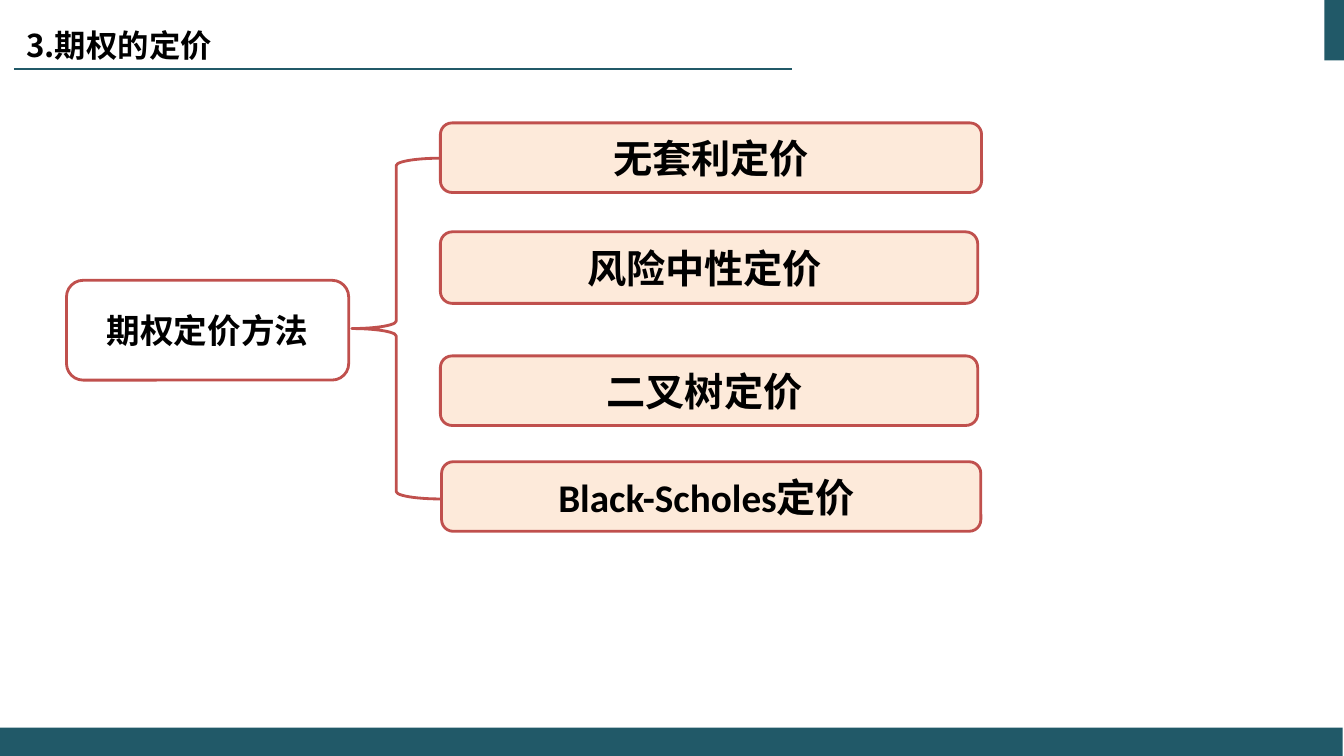
"""Build the slide on option pricing methods."""
from dataclasses import dataclass

from lxml.etree import SubElement
from pptx import Presentation
from pptx.dml.color import RGBColor
from pptx.enum.shapes import MSO_CONNECTOR, MSO_SHAPE
from pptx.enum.text import MSO_ANCHOR, MSO_AUTO_SIZE, PP_ALIGN
from pptx.oxml.ns import qn
from pptx.shapes.autoshape import Shape
from pptx.slide import Slide
from pptx.text.text import TextFrame
from pptx.util import Pt


@dataclass(frozen=True)
class Theme:
    """Colours, fonts and sizes of the slide."""
    teal: RGBColor = RGBColor(0x21, 0x59, 0x68)
    red: RGBColor = RGBColor(0xC0, 0x50, 0x4D)
    peach: RGBColor = RGBColor(0xFD, 0xEA, 0xDA)
    white: RGBColor = RGBColor(0xFF, 0xFF, 0xFF)
    black: RGBColor = RGBColor(0, 0, 0)
    latin: str = "Calibri"
    cjk: str = "Noto Sans CJK SC"
    title: float = 22.4
    root: float = 24
    method: float = 28
    outline: float = 2
    rule: float = 1.5


@dataclass(frozen=True)
class Box:
    """A place on the slide, in points."""
    left: float
    top: float
    width: float
    height: float


@dataclass(frozen=True)
class Method:
    """A pricing method and its box."""
    text: str
    box: Box


THEME = Theme()
FOOTER = Box(0, 519.8, 959, 20.2)
CORNER = Box(946, 0, 14, 43.2)
TITLE = Box(11.5, 9.4, 238.3, 39.6)
ROOT = Box(47.5, 200.2, 201.6, 71.3)
BRACE = Box(251.3, 113, 63.4, 243.4)
METHODS = (
    Method("无套利定价", Box(314.6, 87.8, 386.6, 49.7)),
    Method("风险中性定价 ", Box(314.6, 165.6, 383.8, 51.1)),
    Method("二叉树定价 ", Box(314.6, 254.2, 383.8, 49.7)),
    Method("Black-Scholes定价 ", Box(315.4, 329.8, 385.2, 49.7)),
)


def place(sp: Shape, box: Box) -> None:
    """Move and size a shape."""
    sp.left, sp.top = Pt(box.left), Pt(box.top)
    sp.width, sp.height = Pt(box.width), Pt(box.height)


def write(tf: TextFrame, text: str, size: float, font: str, align: PP_ALIGN, anchor: MSO_ANCHOR) -> None:
    """Write one bold black line."""
    tf.word_wrap = True
    tf.auto_size = MSO_AUTO_SIZE.NONE
    tf.vertical_anchor = anchor
    p = tf.paragraphs[0]
    p.alignment = align
    r = p.add_run()
    r.text = text
    r.font.size, r.font.bold, r.font.name = Pt(size), True, font
    r.font.color.rgb = THEME.black
    SubElement(r.font._element, qn("a:ea"), typeface=THEME.cjk)


def add_panel(s: Slide, kind: MSO_SHAPE, box: Box, fill: RGBColor, outline: RGBColor | None = None) -> Shape:
    """Add a flat filled shape, outlined if a colour is given."""
    sp = s.shapes.add_shape(kind, 0, 0, 0, 0)
    place(sp, box)
    sp.shadow.inherit = False
    sp.fill.solid()
    sp.fill.fore_color.rgb = fill
    if outline is None:
        sp.line.fill.background()
    else:
        sp.line.color.rgb = outline
        sp.line.width = Pt(THEME.outline)
    return sp


def add_label(s: Slide, text: str, box: Box, fill: RGBColor, size: float) -> None:
    """Add a rounded box with centred text."""
    sp = add_panel(s, MSO_SHAPE.ROUNDED_RECTANGLE, box, fill, THEME.red)
    write(sp.text_frame, text, size, THEME.latin, PP_ALIGN.CENTER, MSO_ANCHOR.MIDDLE)


def add_rule(s: Slide, left: float, right: float, y: float) -> None:
    """Add the line under the title."""
    rule = s.shapes.add_connector(MSO_CONNECTOR.STRAIGHT, Pt(left), Pt(y), Pt(right), Pt(y))
    rule.line.color.rgb = THEME.teal
    rule.line.width = Pt(THEME.rule)
    SubElement(rule._element.spPr, qn("a:effectLst"))


def main() -> None:
    """Build and save the presentation."""
    prs = Presentation()
    prs.slide_width, prs.slide_height = Pt(960), Pt(540)
    s = prs.slides.add_slide(prs.slide_layouts[5])

    for bar in (FOOTER, CORNER):
        add_panel(s, MSO_SHAPE.RECTANGLE, bar, THEME.teal)
    add_rule(s, 10, 566, 49)

    title = s.shapes.title
    place(title, TITLE)
    write(title.text_frame, "3.期权的定价", THEME.title, THEME.cjk, PP_ALIGN.LEFT, MSO_ANCHOR.BOTTOM)

    add_label(s, "期权定价方法", ROOT, THEME.white, THEME.root)
    add_panel(s, MSO_SHAPE.LEFT_BRACE, BRACE, THEME.white, THEME.red)
    for method in METHODS:
        add_label(s, method.text, method.box, THEME.peach, THEME.method)

    prs.save("out.pptx")


if __name__ == "__main__":
    main()
